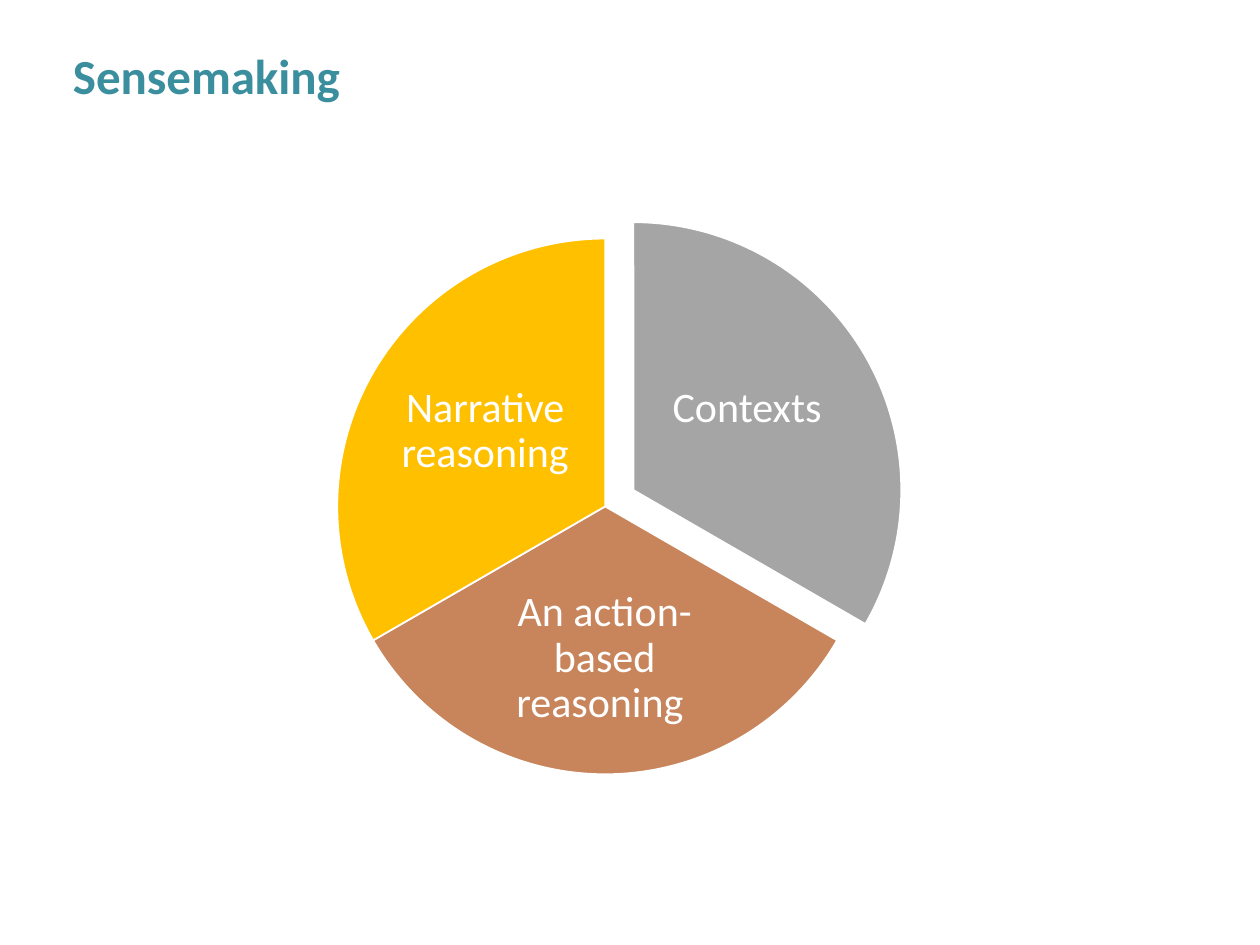
from pptx import Presentation
from pptx.dml.color import RGBColor
from pptx.enum.shapes import MSO_SHAPE as Shape
from pptx.enum.text import MSO_ANCHOR as Anchor, PP_ALIGN as Align
from pptx.util import Cm, Pt

TEAL = RGBColor(0x3B, 0x8E, 0x9D)
GREY = RGBColor(0xA5, 0xA5, 0xA5)
BROWN = RGBColor(0xC8, 0x85, 0x5C)
GOLD = RGBColor(0xFF, 0xC0, 0x00)
WHITE = RGBColor(0xFF, 0xFF, 0xFF)


def add_text(slide, text, box, size, color):
    frame = slide.shapes.add_textbox(*map(Cm, box)).text_frame
    frame.word_wrap = True
    frame.text = text
    font = frame.paragraphs[0].runs[0].font
    font.name = "Calibri"
    font.size = Pt(size)
    font.color.rgb = color
    return frame


prs = Presentation()
prs.slide_width, prs.slide_height = Cm(25.4), Cm(19.05)
slide = prs.slides.add_slide(prs.slide_layouts[6])

title = add_text(slide, "Sensemaking", (1.22, 0.79, 15, 1.45), 28, TEAL)
title.paragraphs[0].runs[0].font.bold = True

SIZE = 10.8
# Label, fill, start angle, left and top of the circle, label box
parts = [
    ("Contexts", GREY, 270, 7.37, 4.48, (13.23, 6.45, 3.66, 3.6)),
    ("An action-based reasoning ", BROWN, 30, 6.8, 4.81,
     (9.75, 11.6, 4.88, 3.35)),
    ("Narrative reasoning", GOLD, 150, 6.8, 4.81, (7.95, 6.9, 3.66, 3.6)),
]
for label, color, start, left, top, box in parts:
    pie = slide.shapes.add_shape(
        Shape.PIE, Cm(left), Cm(top), Cm(SIZE), Cm(SIZE))
    pie.shadow.inherit = False
    # Pie angles are stored in units of 0.6 per degree
    pie.adjustments[0] = start * 0.6
    pie.adjustments[1] = (start + 120) % 360 * 0.6
    pie.fill.solid()
    pie.fill.fore_color.rgb = color
    pie.line.color.rgb = WHITE
    pie.line.width = Pt(1)

    frame = add_text(slide, label, box, 24, WHITE)
    frame.vertical_anchor = Anchor.MIDDLE
    frame.margin_left = frame.margin_right = Cm(0.08)
    frame.margin_top = frame.margin_bottom = Cm(0.08)
    frame.paragraphs[0].alignment = Align.CENTER
    frame.paragraphs[0].line_spacing = 0.9

prs.save("out.pptx")
